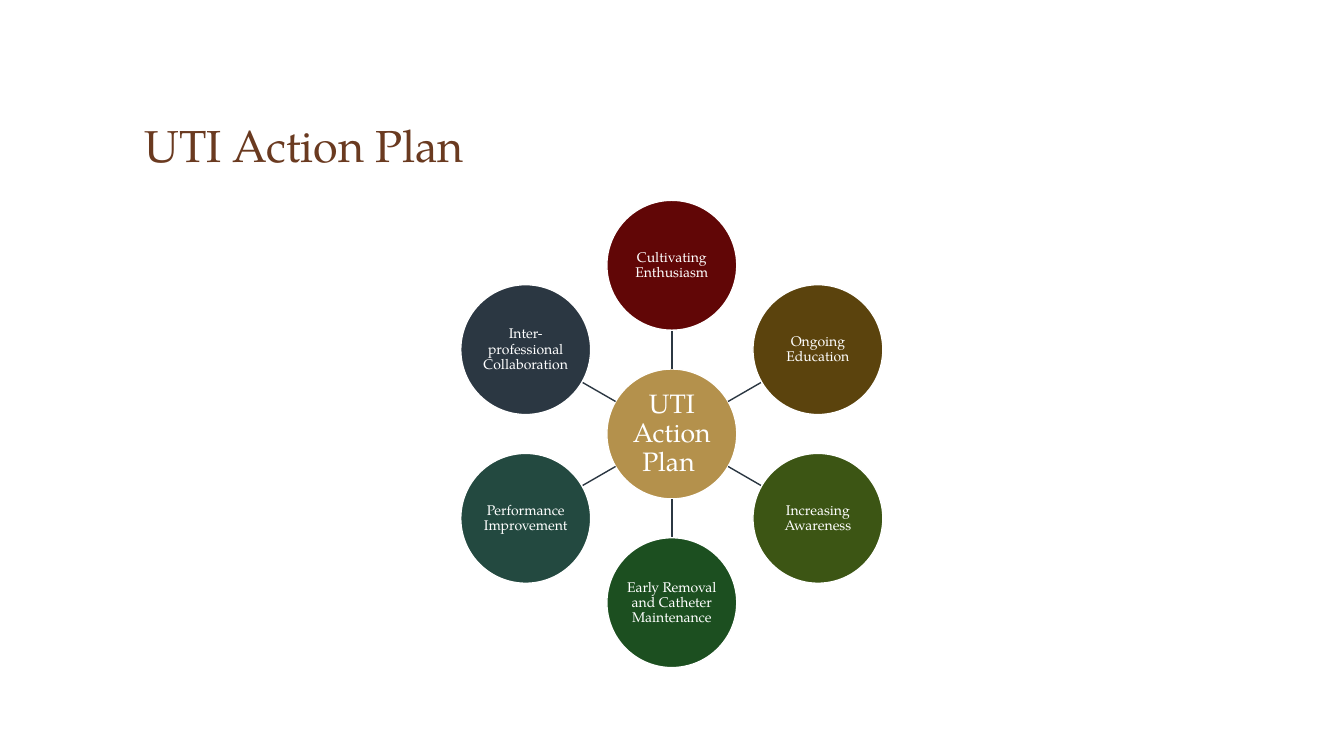
from math import cos, radians, sin

from lxml import etree
from pptx import Presentation
from pptx.dml.color import RGBColor
from pptx.enum.shapes import MSO_CONNECTOR, MSO_SHAPE
from pptx.enum.text import MSO_ANCHOR, PP_ALIGN
from pptx.oxml.ns import qn
from pptx.util import Pt

OVAL = MSO_SHAPE.OVAL
STRAIGHT = MSO_CONNECTOR.STRAIGHT
MIDDLE, BOTTOM = MSO_ANCHOR.MIDDLE, MSO_ANCHOR.BOTTOM
CENTER = PP_ALIGN.CENTER

WHITE = RGBColor(0xFF, 0xFF, 0xFF)
BROWN = RGBColor(0x6A, 0x3A, 0x20)
GOLD = RGBColor(0xB4, 0x91, 0x4C)
MAROON = RGBColor(0x61, 0x06, 0x06)
UMBER = RGBColor(0x5B, 0x43, 0x0D)
OLIVE = RGBColor(0x3C, 0x55, 0x14)
GREEN = RGBColor(0x1C, 0x4F, 0x20)
TEAL = RGBColor(0x23, 0x49, 0x40)
SLATE = RGBColor(0x2B, 0x37, 0x42)

# Wheel geometry in points
HUB_X, HUB_Y = 479.9, 310
DIAMETER = 92.8
RING_RADIUS = 120.5

# Clockwise from the top
ACTIONS = [
    ("Cultivating Enthusiasm", MAROON),
    ("Ongoing Education", UMBER),
    ("Increasing Awareness", OLIVE),
    ("Early Removal and Catheter Maintenance", GREEN),
    ("Performance Improvement", TEAL),
    ("Inter-professional Collaboration", SLATE),
]


class WheelSlide:
    font_name = "TeX Gyre Pagella"

    def __init__(self, page):
        self.page = page

    def set_text(self, box, text, size, color):
        frame = box.text_frame
        frame.word_wrap = True
        frame.text = text
        para = frame.paragraphs[0]
        font = para.runs[0].font
        font.name, font.size, font.color.rgb = self.font_name, Pt(size), color
        return frame, para

    def title(self, text, left, top, width, height):
        box = self.page.shapes.add_textbox(Pt(left), Pt(top), Pt(width), Pt(height))
        frame, _ = self.set_text(box, text, 32, BROWN)
        frame.vertical_anchor = BOTTOM

    def circle(self, text, x, y, fill, size):
        shape = self.page.shapes.add_shape(
            OVAL, Pt(x - DIAMETER / 2), Pt(y - DIAMETER / 2), Pt(DIAMETER), Pt(DIAMETER))
        shape.shadow.inherit = False
        shape.fill.solid()
        shape.fill.fore_color.rgb = fill
        shape.line.color.rgb = WHITE
        shape.line.width = Pt(1)
        frame, para = self.set_text(shape, text, size, WHITE)
        frame.vertical_anchor = MIDDLE
        frame.margin_left = frame.margin_right = Pt(0.5)
        frame.margin_top = frame.margin_bottom = Pt(0.5)
        para.alignment = CENTER
        para.line_spacing = 0.9

    def spoke(self, start, end):
        line = self.page.shapes.add_connector(STRAIGHT, *map(Pt, start + end))
        line.line.color.rgb = SLATE
        line.line.width = Pt(1)
        etree.SubElement(line._element.spPr, qn("a:effectLst"))


def ring_point(angle, radius):
    return HUB_X + radius * cos(angle), HUB_Y + radius * sin(angle)


def main():
    deck = Presentation()
    deck.slide_width, deck.slide_height = Pt(960), Pt(540)
    slide = WheelSlide(deck.slides.add_slide(deck.slide_layouts[6]))

    # Title and hub
    slide.title("UTI Action Plan", 96, 34, 767.5, 92)
    slide.circle("UTI Action Plan ", HUB_X, HUB_Y, GOLD, 19)

    # Spokes and action circles
    for index, (label, color) in enumerate(ACTIONS):
        angle = radians(index * 360 / len(ACTIONS) - 90)
        slide.spoke(ring_point(angle, DIAMETER / 2),
                    ring_point(angle, RING_RADIUS - DIAMETER / 2))
        slide.circle(label, *ring_point(angle, RING_RADIUS), color, 10)

    deck.save("out.pptx")


if __name__ == "__main__":
    main()
